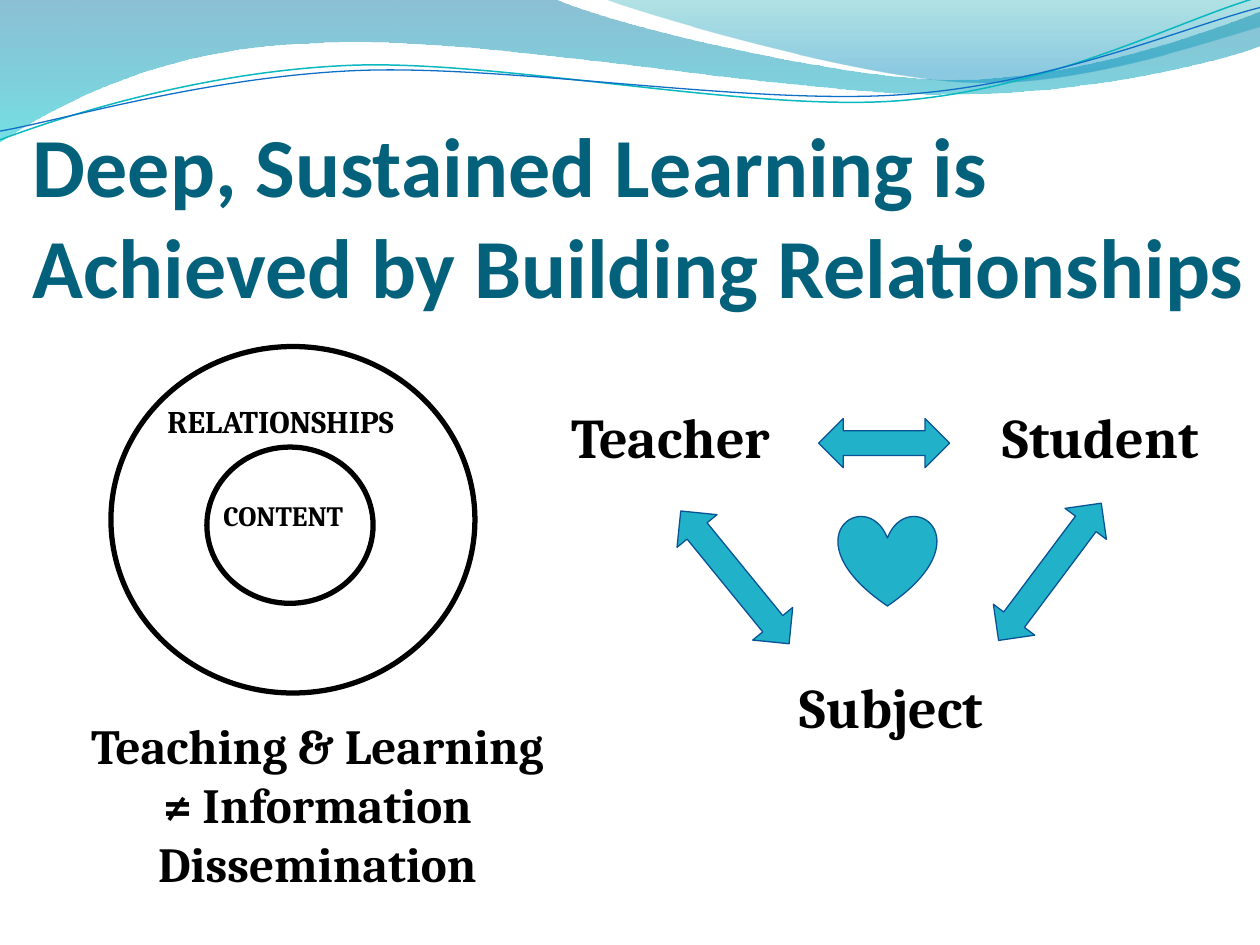
"""Build a slide on how learning grows out of teacher, student and subject relationships."""
from lxml import etree
from pptx import Presentation
from pptx.dml.color import RGBColor
from pptx.enum import shapes as kinds, text as txt
from pptx.oxml.ns import qn
from pptx.util import Pt

BLACK = RGBColor(0x00, 0x00, 0x00)
TITLE_TEAL = RGBColor(0x04, 0x61, 0x7B)
ARROW_TEAL = RGBColor(0x21, 0xB2, 0xC9)
ARROW_EDGE = RGBColor(0x09, 0x52, 0x95)
BAND_BLUE = RGBColor(0x00, 0x74, 0xA1)
BAND_CYAN = RGBColor(0x00, 0xC6, 0xCF)
CREST_GREEN = RGBColor(0x00, 0xA1, 0xA9)
CREST_BLUE = RGBColor(0x00, 0x8B, 0xBF)
WAVE_CYAN = RGBColor(0x0A, 0xB8, 0xBF)
WAVE_BLUE = RGBColor(0x0F, 0x6F, 0xC6)

BAND = [(0, 0), (316.8, -0.7), (342.7, 12.2, 478.1, 45.4, 545.8, 45.4),
        (614.2, 45.4, 689.8, 18.7, 720, 6.5), (720.7, 25.9),
        (707.8, 31.7, 626.4, 54.7, 537.1, 54), (447.8, 54, 275, 20.2, 185, 24.5),
        (92.9, 25.9, 33.1, 59.8, -0.7, 81.4)]
CREST = [(344.9, -0.7), (366.5, 7.9, 491, 44.6, 553.7, 46.8),
         (616.3, 49.7, 691.9, 23, 720, 15.1), (720, 0)]
CYAN_WAVE = [(0, 79.9), (34.6, 67, 113.8, 41, 199.4, 37.4),
             (284.4, 33.8, 427, 64.1, 513.4, 57.6), (599.8, 51.1, 675.4, 10.8, 718.6, -1.4)]
BLUE_WAVE = [(0, 74.9), (33.8, 69.1, 118.1, 43.9, 203.8, 40.3),
             (290.2, 36.7, 429.8, 60.5, 516.2, 54), (601.9, 48.2, 677.5, 15.1, 720, 4.3)]


def add_outline(slide, segments, close):
    """Add a freeform where a pair is a straight line and six numbers are a cubic curve."""
    numbers = [Pt(number) for segment in segments for number in segment]
    points = list(zip(numbers[::2], numbers[1::2]))
    builder = slide.shapes.build_freeform(*points[0])
    builder.add_line_segments(points[1:], close=close)
    outline = builder.convert_to_shape()
    outline.shadow.inherit = False
    moves = iter(list(outline.element.spPr.iter(qn("a:lnTo"))))
    for segment in segments[1:]:
        first = next(moves)
        if len(segment) == 6:
            first.tag = qn("a:cubicBezTo")
            for extra in (next(moves), next(moves)):
                first.append(extra[0])
                extra.getparent().remove(extra)
    return outline


def add_band(slide, segments, stops):
    """Add a filled band with a downward see-through gradient."""
    band = add_outline(slide, segments, True)
    band.line.fill.background()
    band.fill.gradient()
    band.fill.gradient_angle = 270
    for stop, (position, color, _) in zip(band.fill.gradient_stops, stops):
        stop.position = position
        stop.color.rgb = color
    for color, (_, _, opacity) in zip(band.element.spPr.iter(qn("a:srgbClr")), stops):
        etree.SubElement(color, qn("a:alpha"), val=str(opacity * 1000))


def add_wave(slide, segments, color, width):
    """Add a thin open wave line."""
    wave = add_outline(slide, segments, False)
    wave.fill.background()
    wave.line.color.rgb = color
    wave.line.width = Pt(width)


def add_figure(slide, kind, box, fill=None, edge=BLACK, width=3, rotation=0):
    """Add a preset shape, hollow unless a fill is given."""
    figure = slide.shapes.add_shape(kind, *map(Pt, box))
    figure.shadow.inherit = False
    figure.rotation = rotation
    if fill is None:
        figure.fill.background()
    else:
        figure.fill.solid()
        figure.fill.fore_color.rgb = fill
    figure.line.color.rgb = edge
    figure.line.width = Pt(width)


def add_text(slide, words, box, size, font="Cambria", color=BLACK, wrap=True,
             align=txt.PP_ALIGN.CENTER, anchor=txt.MSO_ANCHOR.TOP,
             insets=(7.2, 3.6, 7.2, 3.6)):
    """Add bold text, one paragraph for each line of words."""
    frame = slide.shapes.add_textbox(*map(Pt, box)).text_frame
    frame.word_wrap = wrap
    frame.vertical_anchor = anchor
    (frame.margin_left, frame.margin_top,
     frame.margin_right, frame.margin_bottom) = map(Pt, insets)
    frame.text = words
    for paragraph in frame.paragraphs:
        paragraph.alignment = align
        style = paragraph.runs[0].font
        style.name, style.size, style.bold = font, Pt(size), True
        style.color.rgb = color


def main():
    """Assemble and save the slide."""
    deck = Presentation()
    deck.slide_width, deck.slide_height = Pt(720), Pt(540)
    slide = deck.slides.add_slide(deck.slide_layouts[6])
    left = txt.PP_ALIGN.LEFT
    preset = kinds.MSO_SHAPE

    add_band(slide, BAND, [(0, BAND_BLUE, 45), (1, BAND_CYAN, 55)])
    add_band(slide, CREST, [(0, CREST_GREEN, 30), (0.8, CREST_BLUE, 45)])
    add_wave(slide, CYAN_WAVE, WAVE_CYAN, 0.85)
    add_wave(slide, BLUE_WAVE, WAVE_BLUE, 0.75)

    add_text(slide, "Deep, Sustained Learning is Achieved by Building Relationships",
             (18.7, 64, 692.7, 116), 48, font="Calibri", color=TITLE_TEAL, align=left,
             anchor=txt.MSO_ANCHOR.BOTTOM, insets=(0, 3.6, 0, 0))

    for role, box in (("Student", (558.2, 226.4, 141.8, 46)),
                      ("Teacher", (316.8, 226.4, 133, 46)),
                      ("Subject", (437, 381, 145, 46))):
        add_text(slide, role, box, 32)

    for kind, box, rotation in (
            (preset.HEART, (479, 294.5, 56.2, 51.8), 0),
            (preset.LEFT_RIGHT_ARROW, (467.8, 239.2, 74.9, 28.1), 0),
            (preset.LEFT_RIGHT_ARROW, (371, 315.2, 97.9, 29.5), 50.8),
            (preset.LEFT_RIGHT_ARROW, (551, 312, 97.9, 29.5), 126.8)):
        add_figure(slide, kind, box, ARROW_TEAL, ARROW_EDGE, 0.75, rotation)

    for label, label_box, size, ring in (
            ("RELATIONSHIPS", (88.6, 226, 161.3, 29), 18, (63.4, 198, 208, 198)),
            ("CONTENT", (120.6, 281.5, 93.6, 26.6), 16, (118.2, 255.5, 95, 89.3))):
        add_figure(slide, preset.OVAL, ring)
        add_text(slide, label, label_box, size, wrap=False, align=left)

    add_text(slide, "Teaching & Learning\n≠ Information Dissemination",
             (-0.5, 405.2, 363.6, 108.7), 28)
    deck.save("out.pptx")


if __name__ == "__main__":
    main()
